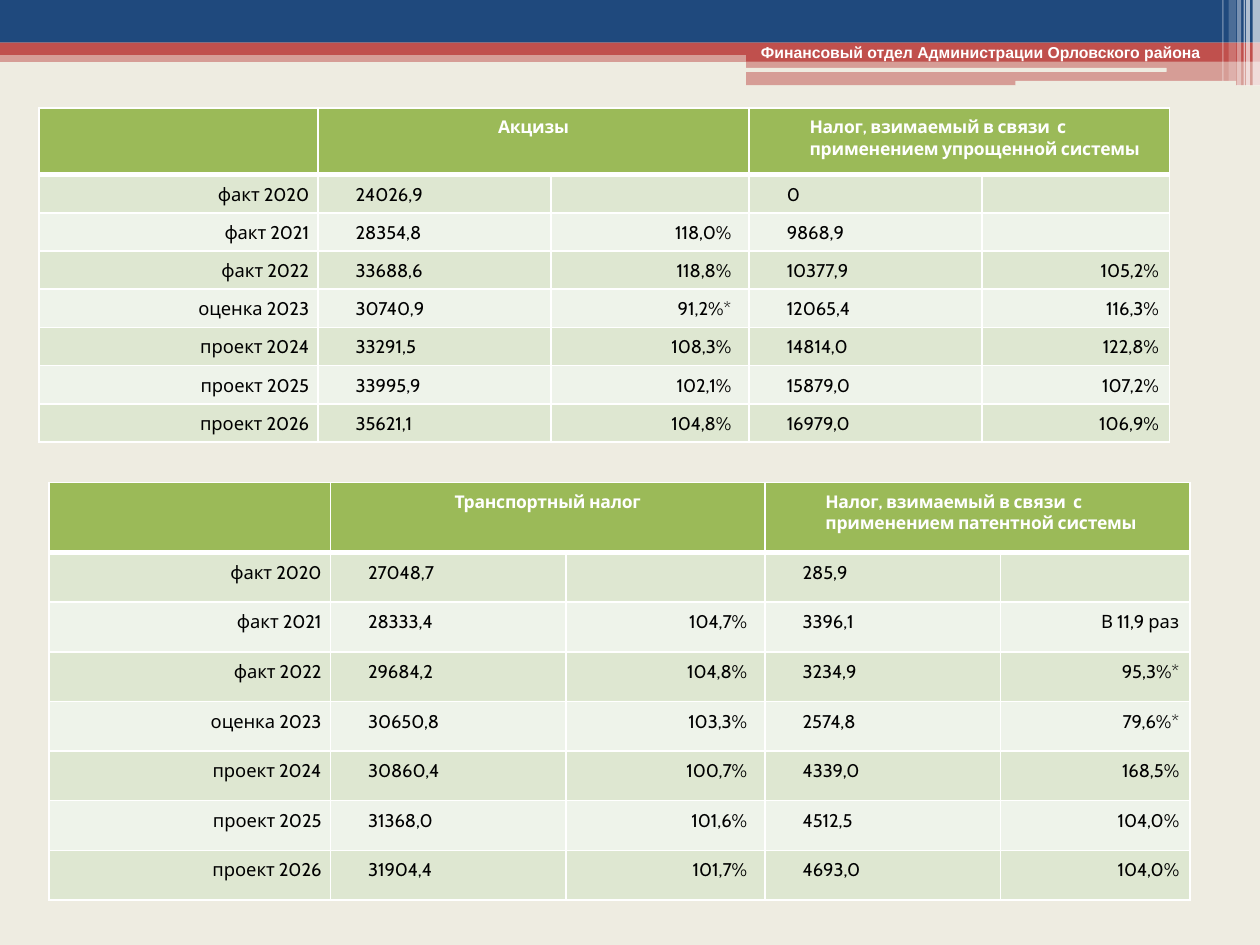
"""Build a slide with two tables of tax revenue for 2020–2026."""
from dataclasses import dataclass

from lxml.etree import SubElement
from pptx import Presentation
from pptx.dml.color import RGBColor
from pptx.enum.shapes import MSO_AUTO_SHAPE_TYPE as Form
from pptx.enum.text import PP_ALIGN as Align
from pptx.oxml.ns import qn
from pptx.util import Cm, Pt

COLORS = {
    "paper": "EEECE1", "navy": "1F497D", "red": "C0504D", "white": "FFFFFF",
    "black": "000000", "header": "9BBA58", "dark band": "DEE7D1", "light band": "EEF3EA",
}
YEARS = ("факт 2020", "факт 2021", "факт 2022", "оценка 2023",
         "проект 2024", "проект 2025", "проект 2026")
RIGHT_GAPS = (0.18, 0, 0.36, 0, 0.22)


@dataclass
class Band:
    left: float
    top: float
    width: float
    height: float
    color: str
    opacity: int = 100
    form: Form = Form.RECTANGLE


@dataclass
class TaxTable:
    left: float
    top: float
    columns: tuple
    header_height: float
    row_height: float
    titles: tuple
    values: tuple


BANDS = (
    Band(0, 1.02, 25.4, 0.23, "red", 50),
    Band(0, 0, 25.4, 0.86, "navy"),
    Band(0, 0.86, 25.4, 0.25, "red"),
    Band(15.04, 0.99, 10.36, 0.25, "red"),
    Band(15.04, 1.22, 10.36, 0.5, "red", 50),
    Band(15.01, 1.37, 8.51, 0.08, "paper", form=Form.ROUNDED_RECTANGLE),
    Band(20.47, 1.63, 4.45, 0.1, "paper", form=Form.ROUNDED_RECTANGLE),
    Band(25.25, 0, 0.15, 1.73, "white", 65),
    Band(25.12, 0, 0.08, 1.73, "white", 65),
    Band(25.07, 0, 0.03, 1.73, "white", 60),
    Band(24.94, 0, 0.08, 1.73, "white", 40),
    Band(24.77, 0, 0.15, 1.63, "white", 20),
    Band(24.64, 0, 0.03, 1.63, "white", 30),
)

TABLES = (
    TaxTable(
        0.79, 2.18, (5.62, 4.7, 3.99, 4.7, 3.78), 1.34, 0.77,
        ("Акцизы", "Налог, взимаемый в связи  с применением упрощенной системы"),
        (("24026,9", "", "0", ""),
         ("28354,8", "118,0%", "9868,9", ""),
         ("33688,6", "118,8%", "10377,9", "105,2%"),
         ("30740,9", "91,2%*", "12065,4", "116,3%"),
         ("33291,5", "108,3%", "14814,0", "122,8%"),
         ("33995,9", "102,1%", "15879,0", "107,2%"),
         ("35621,1", "104,8%", "16979,0", "106,9%")),
    ),
    TaxTable(
        0.99, 9.73, (5.67, 4.75, 4.01, 4.75, 3.82), 1.41, 1,
        ("Транспортный налог", "Налог, взимаемый в связи  с применением патентной системы"),
        (("27048,7", "", "285,9", ""),
         ("28333,4", "104,7%", "3396,1", "В 11,9 раз"),
         ("29684,2", "104,8%", "3234,9", "95,3%*"),
         ("30650,8", "103,3%", "2574,8", "79,6%*"),
         ("30860,4", "100,7%", "4339,0", "168,5%"),
         ("31368,0", "101,6%", "4512,5", "104,0%"),
         ("31904,4", "101,7%", "4693,0", "104,0%")),
    ),
)


def rgb(name: str) -> RGBColor:
    return RGBColor.from_string(COLORS[name])


def write_text(frame, text: str, *, size: float, color: str = "black", font: str = "Cabin",
               bold: bool = False, align: Align = Align.LEFT, indent: float = 0,
               spacing: int = 0) -> None:
    para = frame.paragraphs[0]
    para.alignment = align
    if not text:
        SubElement(para._p, qn("a:endParaRPr"), sz=str(int(size * 100)))
        return
    if indent:
        para._p.get_or_add_pPr().set("marL", str(Cm(indent)))
    span = para.add_run()
    span.text = text
    span.font.name = font
    span.font.size = Pt(size)
    span.font.bold = bold
    span.font.color.rgb = rgb(color)
    if spacing:
        span._r.get_or_add_rPr().set("spc", str(spacing))


def draw_band(page, band: Band) -> None:
    box = page.shapes.add_shape(
        band.form, Cm(band.left), Cm(band.top), Cm(band.width), Cm(band.height))
    box.shadow.inherit = False
    box.line.fill.background()
    box.fill.solid()
    box.fill.fore_color.rgb = rgb(band.color)
    if band.opacity < 100:
        color = box.fill._xPr.find(qn("a:solidFill"))[0]
        SubElement(color, qn("a:alpha"), val=str(band.opacity * 1000))


def style_cell(cell, row: int, column: int) -> None:
    cell.margin_left = cell.margin_bottom = 0
    cell.margin_top = Cm(0.18)
    cell.margin_right = Cm(RIGHT_GAPS[column] if row else 0)
    widths = {"a:lnL": 1, "a:lnR": 1, "a:lnT": 3 if row == 1 else 1, "a:lnB": 1 if row else 3}
    for side, width in widths.items():
        line = SubElement(cell._tc.get_or_add_tcPr(), qn(side), w=str(Pt(width)))
        SubElement(SubElement(line, qn("a:solidFill")), qn("a:srgbClr"), val=COLORS["white"])
    cell.fill.solid()
    name = "header" if row == 0 else "dark band" if row % 2 else "light band"
    cell.fill.fore_color.rgb = rgb(name)


def draw_table(page, tax: TaxTable) -> None:
    heights = [tax.header_height] + [tax.row_height] * len(YEARS)
    table = page.shapes.add_table(
        len(heights), len(tax.columns), Cm(tax.left), Cm(tax.top),
        Cm(sum(tax.columns)), Cm(sum(heights))).table
    for column, width in zip(table.columns, tax.columns):
        column.width = Cm(width)
    for row, height in zip(table.rows, heights):
        row.height = Cm(height)
    for row in range(len(heights)):
        for column in range(len(tax.columns)):
            style_cell(table.cell(row, column), row, column)

    write_text(table.cell(0, 0).text_frame, "", size=10)
    formats = ({"align": Align.CENTER}, {"indent": 1.22})
    for column, title, extra in zip((1, 3), tax.titles, formats):
        head = table.cell(0, column)
        head.merge(table.cell(0, column + 1))
        head.margin_right = Cm(0.3 if "indent" in extra else 0)
        write_text(head.text_frame, title, size=10, color="white", bold=True,
                   spacing=-10, **extra)
    for row, (year, values) in enumerate(zip(YEARS, tax.values), 1):
        for column, text in enumerate((year, *values)):
            extra = {"indent": 0.76} if column % 2 else {"align": Align.RIGHT}
            write_text(table.cell(row, column).text_frame, text, size=10.5, **extra)


def main() -> None:
    deck = Presentation()
    deck.slide_width, deck.slide_height = Cm(25.4), Cm(19.05)
    page = deck.slides.add_slide(deck.slide_layouts[6])
    page.background.fill.solid()
    page.background.fill.fore_color.rgb = rgb("paper")
    for band in BANDS:
        draw_band(page, band)
    box = page.shapes.add_textbox(Cm(15.09), Cm(0.74), Cm(9.93), Cm(0.64))
    box.text_frame.word_wrap = True
    write_text(box.text_frame, "Финансовый отдел Администрации Орловского района",
               size=9, color="white", font="Arial", bold=True)
    for tax in TABLES:
        draw_table(page, tax)
    deck.save("out.pptx")


if __name__ == "__main__":
    main()
